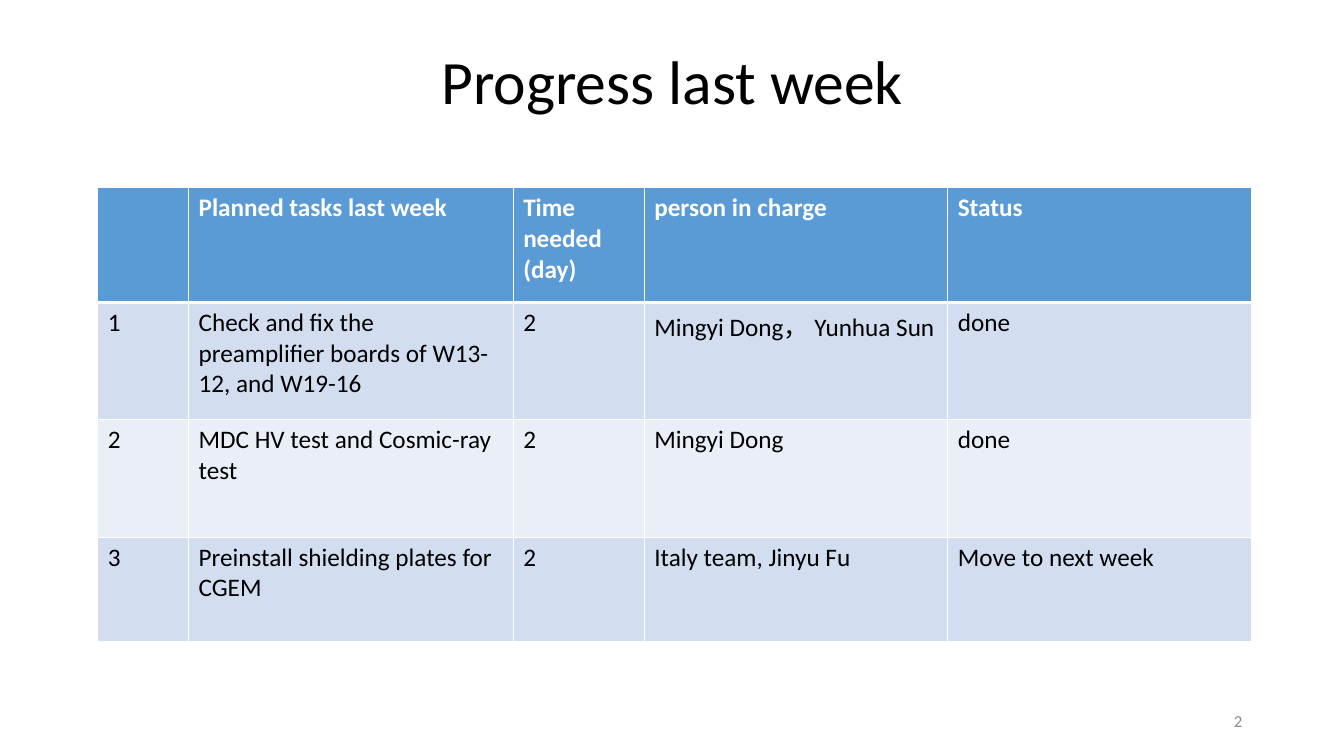
from lxml import etree
from pptx import Presentation
from pptx.dml.color import RGBColor
from pptx.enum import text
from pptx.oxml.ns import qn
from pptx.util import Inches, Pt

FONT = "Calibri"
HEADER_FILL = "5B9BD5"
BAND_FILLS = ["D2DEEF", "EAEFF7"]
COLUMN_WIDTHS = [0.9, 3.22, 1.3, 3.01, 3.01]
ROW_HEIGHTS = [1.14, 1.16, 1.17, 1.04]
TASKS = [
    ["", "Planned tasks last week", "Time needed (day)", "person in charge", "Status"],
    ["1", "Check and fix the preamplifier boards of W13-12, and W19-16", "2",
     "Mingyi Dong， Yunhua Sun", "done"],
    ["2", "MDC HV test and Cosmic-ray test", "2", "Mingyi Dong", "done"],
    ["3", "Preinstall shielding plates for CGEM", "2", "Italy team, Jinyu Fu",
     "Move to next week"],
]


def color(value):
    return RGBColor.from_string(value)


def style_paragraph(paragraph, size, value, bold=False, align=None):
    paragraph.alignment = align
    font = paragraph.font
    font.name, font.size, font.bold = FONT, Pt(size), bold
    font.color.rgb = color(value)


def set_border(cell, side, width, value="FFFFFF"):
    line = etree.SubElement(cell._tc.get_or_add_tcPr(), qn(f"a:ln{side}"), w=str(Pt(width)))
    fill = etree.SubElement(line, qn("a:solidFill"))
    etree.SubElement(fill, qn("a:srgbClr"), val=value)


def add_title(slide, words):
    title = slide.shapes.title
    title.left, title.top = Inches(0.92), Inches(0.32)
    title.width, title.height = Inches(11.5), Inches(1.03)
    frame = title.text_frame
    frame.text = words
    frame.auto_size = text.MSO_AUTO_SIZE.NONE
    frame.vertical_anchor = text.MSO_ANCHOR.MIDDLE
    heading = frame.paragraphs[0]
    heading.line_spacing = 0.9
    style_paragraph(heading, 44, "000000", align=text.PP_ALIGN.CENTER)


def fill_cell(cell, words, row):
    is_header = row == 0
    cell.text = words
    style_paragraph(cell.text_frame.paragraphs[0], 18,
                    "FFFFFF" if is_header else "000000", bold=is_header)
    # Borders go before the fill; a thick rule separates the header
    for side in "LRTB":
        thick = (row, side) in [(0, "B"), (1, "T")]
        set_border(cell, side, 3 if thick else 1)
    cell.fill.solid()
    cell.fill.fore_color.rgb = color(HEADER_FILL if is_header else BAND_FILLS[(row - 1) % 2])


def add_task_table(slide):
    table = slide.shapes.add_table(
        len(TASKS), len(COLUMN_WIDTHS), Inches(0.97), Inches(1.86),
        Inches(sum(COLUMN_WIDTHS)), Inches(sum(ROW_HEIGHTS))).table
    for column, width in zip(table.columns, COLUMN_WIDTHS):
        column.width = Inches(width)
    for row, (entries, height) in enumerate(zip(TASKS, ROW_HEIGHTS)):
        table.rows[row].height = Inches(height)
        for column, words in enumerate(entries):
            fill_cell(table.cell(row, column), words, row)


def add_page_number(slide, number):
    box = slide.shapes.add_textbox(Inches(9.42), Inches(6.95), Inches(3), Inches(0.4))
    frame = box.text_frame
    frame.word_wrap = True
    frame.vertical_anchor = text.MSO_ANCHOR.MIDDLE
    frame.text = number
    style_paragraph(frame.paragraphs[0], 12, "8C8C8C", align=text.PP_ALIGN.RIGHT)


def main():
    deck = Presentation()
    deck.slide_width, deck.slide_height = Inches(13.33), Inches(7.5)
    slide = deck.slides.add_slide(deck.slide_layouts[5])
    add_title(slide, "Progress last week")
    add_task_table(slide)
    add_page_number(slide, "2")
    deck.save("out.pptx")


if __name__ == "__main__":
    main()
